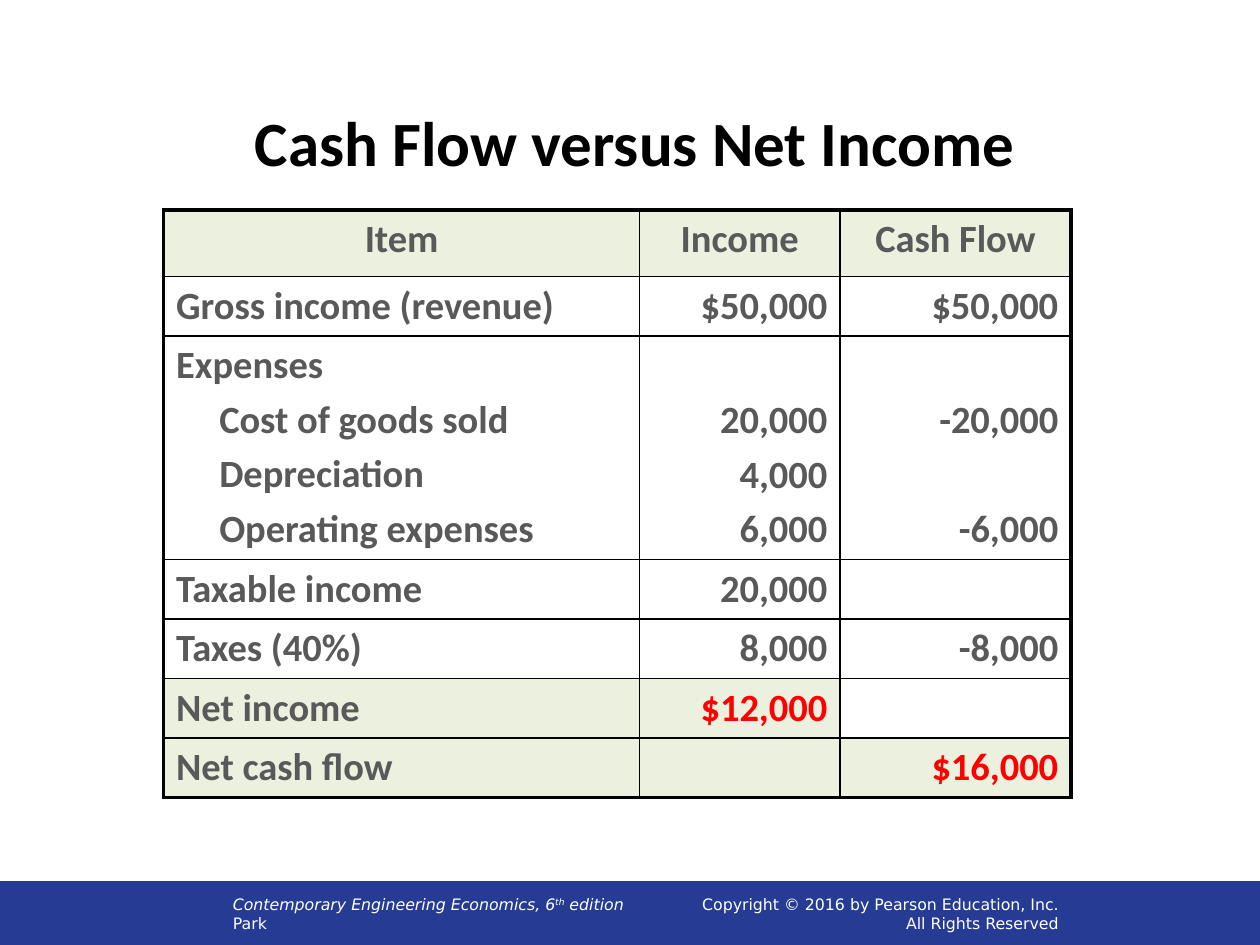
from lxml import etree
from pptx import Presentation
from pptx.dml.color import RGBColor
from pptx.enum.shapes import MSO_SHAPE
from pptx.enum.text import MSO_ANCHOR, PP_ALIGN
from pptx.oxml.ns import qn
from pptx.util import Pt

LEFT, CENTER, RIGHT = PP_ALIGN.LEFT, PP_ALIGN.CENTER, PP_ALIGN.RIGHT
TOP, MIDDLE, BOTTOM = MSO_ANCHOR.TOP, MSO_ANCHOR.MIDDLE, MSO_ANCHOR.BOTTOM
RECT = MSO_SHAPE.RECTANGLE

BLACK = RGBColor(0x00, 0x00, 0x00)
WHITE = RGBColor(0xFF, 0xFF, 0xFF)
GRAY = RGBColor(0x59, 0x59, 0x59)
RED = RGBColor(0xFF, 0x00, 0x00)
BLUE = RGBColor(0x26, 0x3B, 0x94)
PALE_GREEN = RGBColor(0xEB, 0xF1, 0xDE)

GAP = 4.4          # space between lines of one cell
LINE = 31.25       # pitch of those lines
INDENT = 24.6
THIN, THICK = 1, 2.25

COLUMNS = [272, 114.5, 132]
ROW_HEIGHTS = [38, 34, 127.8, 34, 34, 34, 34]
# Each cell is a list of lines.
ROWS = [
    [["Item"], ["Income"], ["Cash Flow"]],
    [["Gross income (revenue)"], ["$50,000"], ["$50,000"]],
    [["Expenses", "Cost of goods sold", "Depreciation", "Operating expenses"],
     ["20,000", "4,000", "6,000"], ["-20,000", "-6,000"]],
    [["Taxable income"], ["20,000"], []],
    [["Taxes (40%)"], ["8,000"], ["-8,000"]],
    [["Net income"], ["$12,000"], []],
    [["Net cash flow"], [], ["$16,000"]],
]
EXPENSES, NET_INCOME, NET_CASH = 2, 5, 6
SHADED = {(0, 0), (0, 1), (0, 2), (NET_INCOME, 0), (NET_INCOME, 1),
          (NET_CASH, 0), (NET_CASH, 1), (NET_CASH, 2)}
RESULTS = {(NET_INCOME, 1), (NET_CASH, 2)}


def add_text(p, text, size, color, font="Calibri", bold=False, italic=False,
             align=LEFT, before=0, indent=0, baseline=0):
    p.alignment = align
    if before:
        p.space_before = Pt(before)
    if indent:
        p._p.get_or_add_pPr().set("marL", str(Pt(indent)))
    r = p.add_run()
    r.text = text
    r.font.name, r.font.size = font, Pt(size)
    r.font.bold, r.font.italic = bold, italic
    r.font.color.rgb = color
    if baseline:
        r.font._element.set("baseline", str(baseline * 1000))


def set_borders(cell, **widths):
    """Draw black edges; keys are L, R, T and B, in that order."""
    tcPr = cell._tc.get_or_add_tcPr()
    for side, width in widths.items():
        ln = etree.SubElement(tcPr, qn(f"a:ln{side}"), w=str(Pt(width)))
        fill = etree.SubElement(ln, qn("a:solidFill"))
        etree.SubElement(fill, qn("a:srgbClr"), val=str(BLACK))


def place_title(slide, x, y, w, h):
    title = slide.shapes.title
    title.left, title.top, title.width, title.height = Pt(x), Pt(y), Pt(w), Pt(h)
    tf = title.text_frame
    tf.vertical_anchor = MIDDLE
    add_text(tf.paragraphs[0], "Cash Flow versus Net Income", 36, BLACK,
             bold=True, align=CENTER)


def fill_cell(cell, row, col, lines):
    last_row, last_col = len(ROWS) - 1, len(COLUMNS) - 1
    set_borders(cell,
                L=THICK if col == 0 else THIN,
                R=THICK if col == last_col else THIN,
                T=THICK if row == 0 else THIN,
                B=THICK if row == last_row else THIN)
    if (row, col) in SHADED:
        cell.fill.solid()
        cell.fill.fore_color.rgb = PALE_GREEN
    else:
        cell.fill.background()
    # Amounts of the expenses line up with the last items beside them.
    cell.vertical_anchor = BOTTOM if row == EXPENSES and col else TOP
    align = CENTER if row == 0 else RIGHT if col else LEFT
    color = RED if (row, col) in RESULTS else GRAY
    # Depreciation is no cash flow, so its line is skipped there.
    between = GAP + LINE if (row, col) == (EXPENSES, last_col) else GAP
    tf = cell.text_frame
    for i, line in enumerate(lines):
        p = tf.add_paragraph() if i else tf.paragraphs[0]
        add_text(p, line, 22, color, bold=True, align=align,
                 before=between if i else 0,
                 indent=INDENT if i and col == 0 else 0)


def add_income_table(slide, x, y):
    table = slide.shapes.add_table(
        len(ROWS), len(COLUMNS), Pt(x), Pt(y),
        Pt(sum(COLUMNS)), Pt(sum(ROW_HEIGHTS))).table
    table.first_row = table.horz_banding = False
    for column, width in zip(table.columns, COLUMNS):
        column.width = Pt(width)
    for i, (height, row) in enumerate(zip(ROW_HEIGHTS, ROWS)):
        table.rows[i].height = Pt(height)
        for j, lines in enumerate(row):
            fill_cell(table.cell(i, j), i, j, lines)


def add_footer_text(slide, x, y, w, h, lines, align):
    """Each line is a list of (text, extra format) pairs."""
    tf = slide.shapes.add_textbox(Pt(x), Pt(y), Pt(w), Pt(h)).text_frame
    tf.word_wrap = True
    tf.vertical_anchor = MIDDLE
    for i, line in enumerate(lines):
        p = tf.add_paragraph() if i else tf.paragraphs[0]
        for text, extra in line:
            add_text(p, text, 9, WHITE, font="DejaVu Sans", align=align, **extra)


def add_footer(slide, x, y, w, h):
    bar = slide.shapes.add_shape(RECT, Pt(x), Pt(y), Pt(w), Pt(h))
    bar.shadow.inherit = False
    bar.fill.solid()
    bar.fill.fore_color.rgb = BLUE
    bar.line.color.rgb = BLUE
    bar.line.width = Pt(0.75)
    book = [("Contemporary Engineering Economics, 6", {"italic": True}),
            ("th", {"italic": True, "baseline": 30}),
            (" edition", {"italic": True})]
    add_footer_text(slide, x + 126, y, 443.5, h, [book, [("Park", {})]], LEFT)
    add_footer_text(slide, x + 354, y, 258, h,
                    [[("Copyright © 2016 by Pearson Education, Inc.", {})],
                     [("All Rights Reserved", {})]], RIGHT)


def main():
    prs = Presentation()
    prs.slide_width, prs.slide_height = Pt(720), Pt(540)
    slide = prs.slides.add_slide(prs.slide_layouts.get_by_name("Title Only"))
    add_footer(slide, 0, 504, 720.5, 36)
    place_title(slide, 36, 55.5, 653.5, 51)
    add_income_table(slide, 93.5, 120)
    prs.save("out.pptx")


if __name__ == "__main__":
    main()
